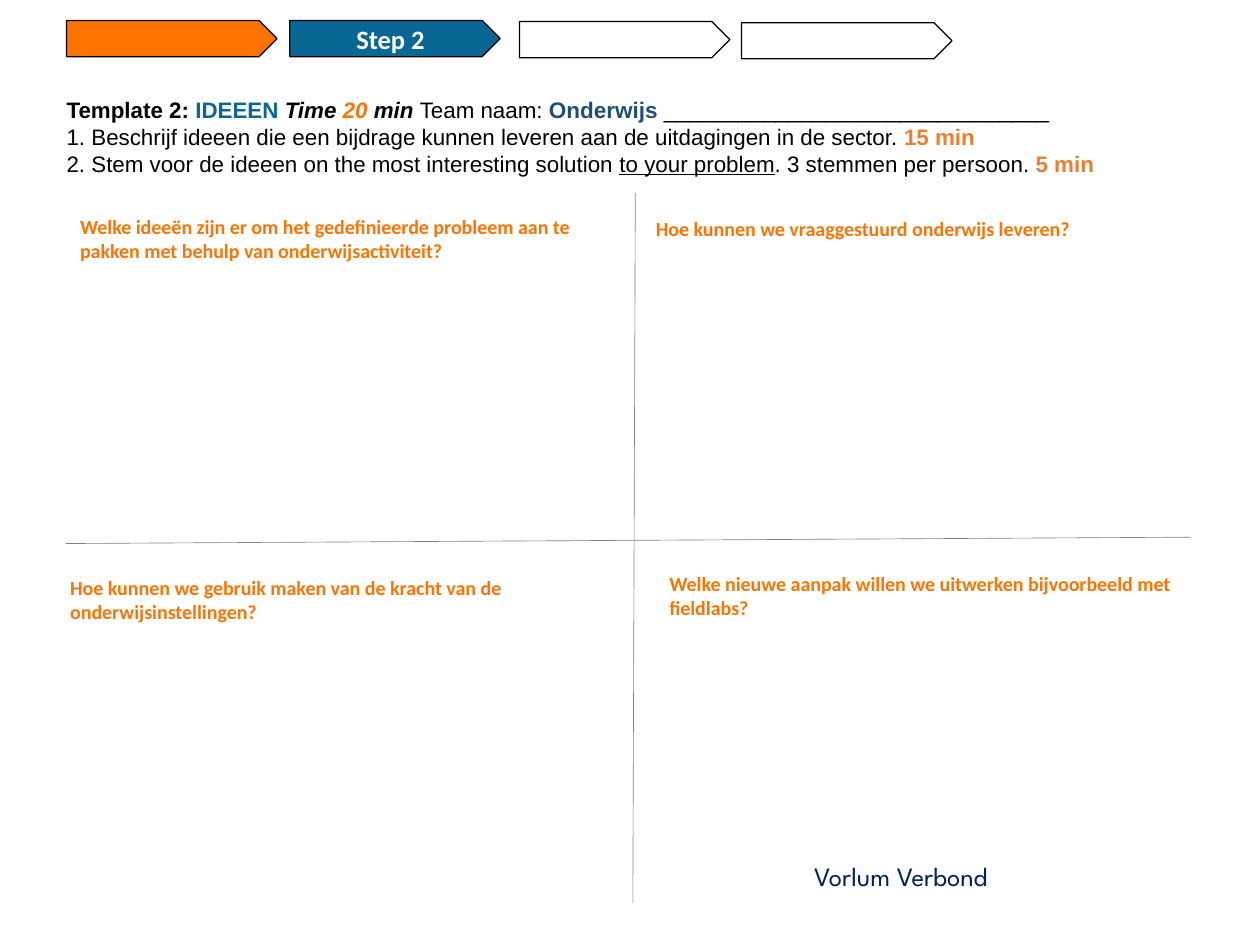
from lxml import etree
from pptx import Presentation
from pptx.dml.color import RGBColor
from pptx.enum import shapes, text
from pptx.oxml import ns
from pptx.util import Cm, Pt

BLACK = RGBColor(0x00, 0x00, 0x00)
WHITE = RGBColor(0xFF, 0xFF, 0xFF)
GREY = RGBColor(0x80, 0x80, 0x80)
ORANGE = RGBColor(0xFF, 0x73, 0x03)
AMBER = RGBColor(0xED, 0x7D, 0x31)
TEAL = RGBColor(0x08, 0x67, 0x95)
BLUE = RGBColor(0x1F, 0x4E, 0x79)
NAVY = RGBColor(0x00, 0x20, 0x60)

PLAIN = dict(name="Arial", size=Pt(17.9), color=BLACK)
BOLD = dict(PLAIN, bold=True)
SLANT = dict(BOLD, italic=True)
TIME = dict(BOLD, color=AMBER)
ASK = dict(name="Calibri", size=Pt(16), color=ORANGE, bold=True)
STEP = dict(name="Calibri", size=Pt(21.2), color=WHITE, bold=True)
TEAM = dict(name="League Spartan", size=Pt(21.2), color=NAVY)

INTRO = [
    [("Template 2: ", BOLD), ("IDEEEN ", dict(BOLD, color=TEAL)),
     ("Time ", SLANT), ("20", dict(SLANT, color=ORANGE)), (" min ", SLANT),
     ("Team naam: ", PLAIN),
     ("Onderwijs", dict(BOLD, size=Pt(18), color=BLUE)),
     (" _______________________________", PLAIN)],
    [("1. Beschrijf ideeen die een bijdrage kunnen leveren aan de "
      "uitdagingen in de sector. ", PLAIN), ("15 min", TIME)],
    [("2. Stem voor de ideeen on the most interesting solution ", PLAIN),
     ("to your problem", dict(PLAIN, underline=True)),
     (". 3 stemmen per persoon. ", PLAIN), ("5 min", TIME)],
]

# Left, top, width, height and wording of each quadrant's question
ASKS = [
    (2.01, 5.92, 14.68, 1.63, "Welke ideeën zijn er om het gedefinieerde "
     "probleem aan te pakken met behulp van onderwijsactiviteit?"),
    (18.26, 5.99, 14.86, 0.94,
     "Hoe kunnen we vraaggestuurd onderwijs leveren?"),
    (1.73, 16.13, 14.68, 1.63, "Hoe kunnen we gebruik maken van de kracht "
     "van de onderwijsinstellingen?"),
    (18.64, 16, 14.68, 1.63, "Welke nieuwe aanpak willen we uitwerken "
     "bijvoorbeeld met fieldlabs?"),
]

# Left, top, fill and label of each step
STEPS = [
    (1.88, 0.58, ORANGE, ""),
    (8.18, 0.58, TEAL, "Step 2"),
    (14.66, 0.61, None, ""),
    (20.93, 0.64, None, ""),
]


def add_run(para, words, style):
    run = para.add_run()
    run.text = words
    for key, value in style.items():
        if key == "color":
            run.font.color.rgb = value
        else:
            setattr(run.font, key, value)


def add_text(slide, box, paras):
    frame = slide.shapes.add_textbox(*map(Cm, box)).text_frame
    frame.word_wrap = True
    for i, runs in enumerate(paras):
        para = frame.add_paragraph() if i else frame.paragraphs[0]
        for words, style in runs:
            add_run(para, words, style)


def add_step(slide, left, top, fill, label):
    step = slide.shapes.add_shape(shapes.MSO_SHAPE.PENTAGON, Cm(left),
                                  Cm(top), Cm(5.94), Cm(1.02))
    step.shadow.inherit = False
    step.line.color.rgb = BLACK
    step.line.width = Pt(1)
    if fill is None:
        step.fill.background()
    else:
        step.fill.solid()
        step.fill.fore_color.rgb = fill
    if label:
        frame = step.text_frame
        frame.vertical_anchor = text.MSO_ANCHOR.MIDDLE
        frame.margin_top = frame.margin_bottom = 0
        para = frame.paragraphs[0]
        para.alignment = text.PP_ALIGN.CENTER
        add_run(para, label, STEP)


def add_line(slide, *ends):
    line = slide.shapes.add_connector(shapes.MSO_CONNECTOR.STRAIGHT,
                                      *map(Cm, ends))
    line.line.color.rgb = GREY
    line.line.width = Pt(0.5)
    etree.SubElement(line._element.spPr, ns.qn("a:effectLst"))


def main():
    deck = Presentation()
    deck.slide_width, deck.slide_height = Cm(35.56), Cm(26.67)
    slide = deck.slides.add_slide(deck.slide_layouts[6])

    # Instructions
    add_text(slide, (1.63, 2.59, 32.79, 3.33), INTRO)

    # Cross that splits the sheet into quadrants
    add_line(slide, 17.93, 5.44, 17.86, 25.48)
    add_line(slide, 1.85, 15.34, 33.63, 15.16)

    # Step bar
    for step in STEPS:
        add_step(slide, *step)

    # Questions
    for *box, words in ASKS:
        add_text(slide, box, [[(words, ASK)]])

    # Group name
    add_text(slide, (22.73, 24.16, 7.32, 1.17), [[("Vorlum Verbond", TEAM)]])

    deck.save("out.pptx")


if __name__ == "__main__":
    main()
